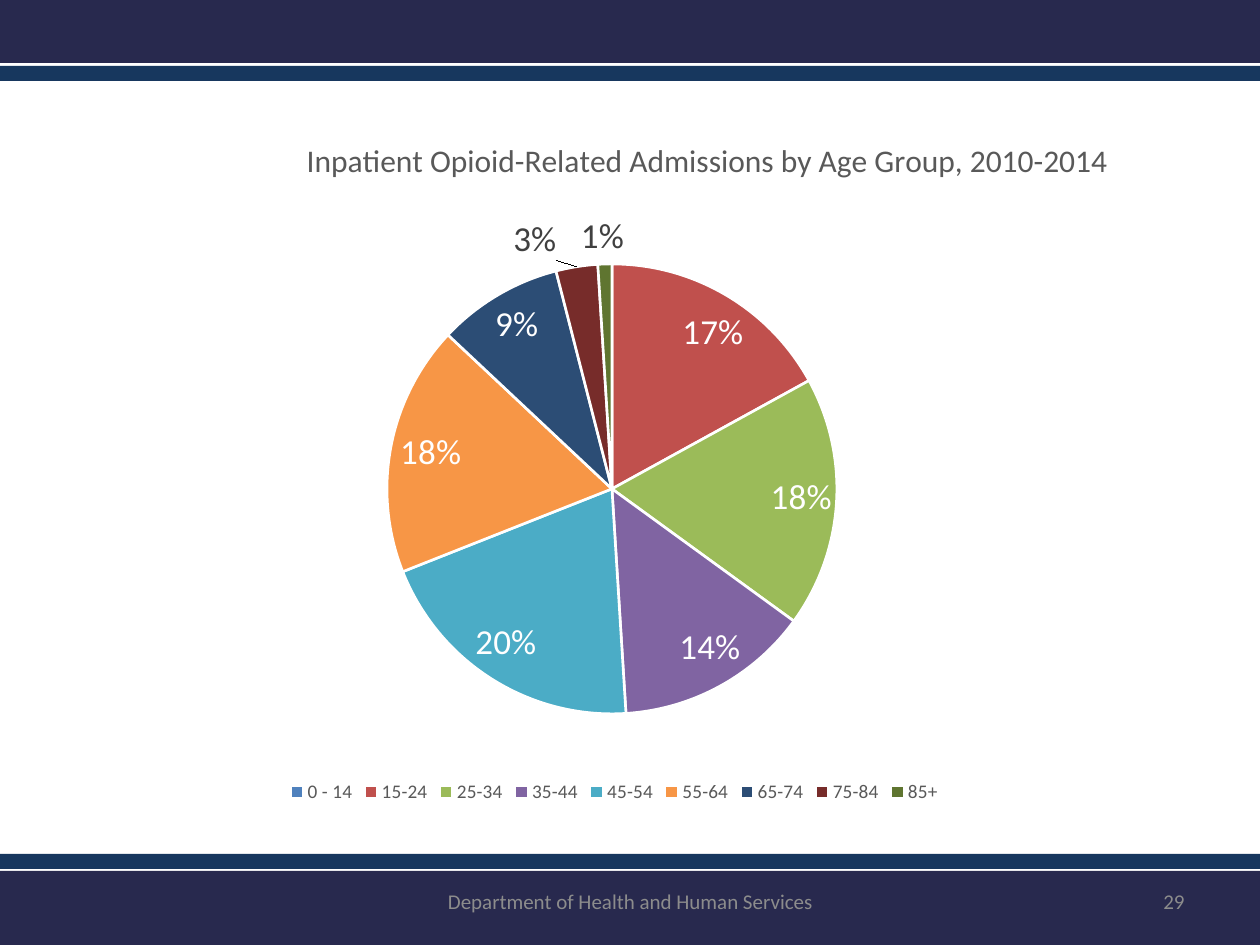
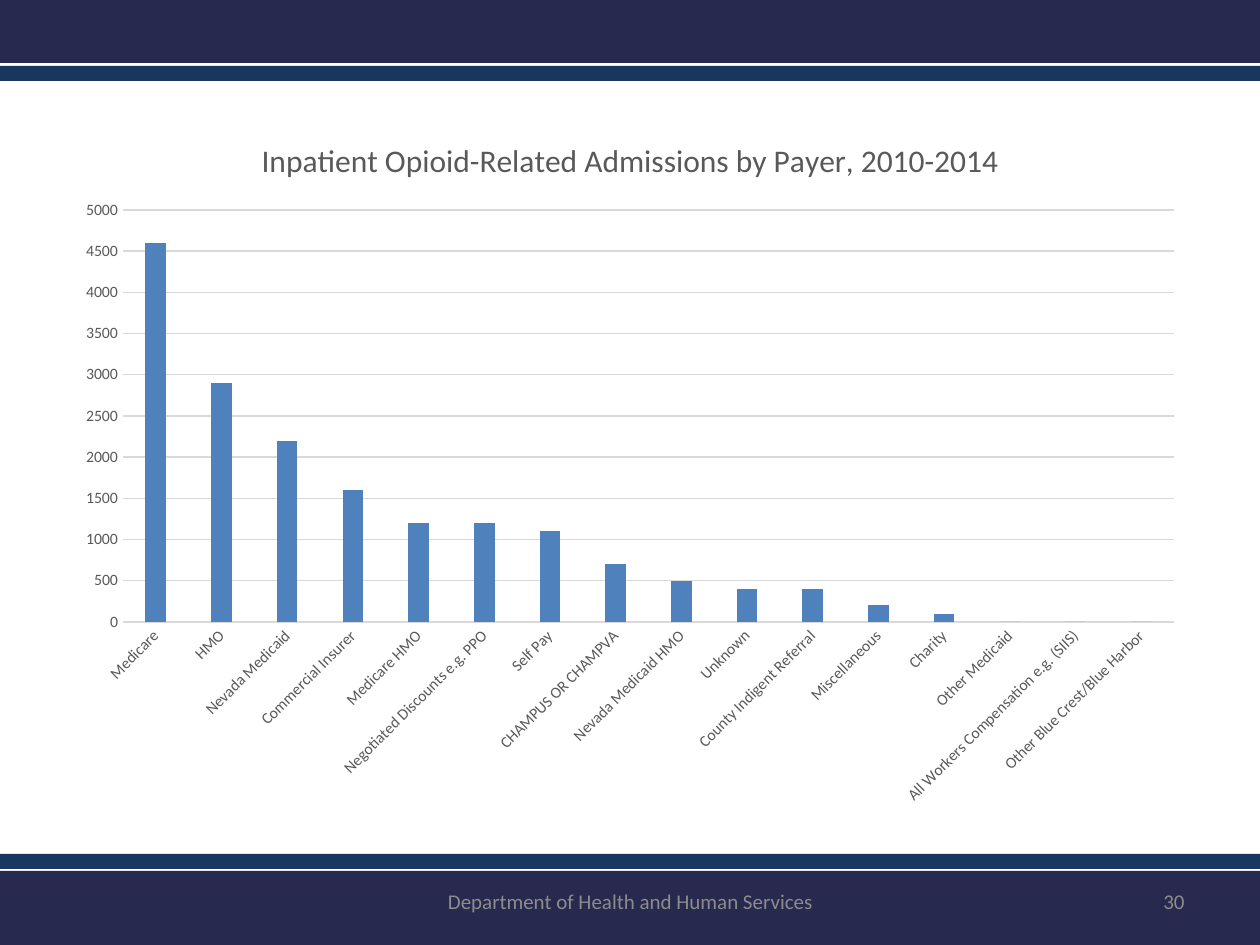
from lxml import etree
from pptx import Presentation
from pptx import util as u
from pptx.chart import data as chart_data
from pptx.dml import color
from pptx.enum import chart as ch, shapes, text
from pptx.oxml import ns

NAVY = color.RGBColor(0x28, 0x29, 0x4E)
STRIPE = color.RGBColor(0x17, 0x37, 0x5E)
FOOTER_GRAY = color.RGBColor(0x8C, 0x8C, 0x8C)
CHART_GRAY = color.RGBColor(0x59, 0x59, 0x59)
LABEL_GRAY = color.RGBColor(0x40, 0x40, 0x40)
GRID = color.RGBColor(0xD9, 0xD9, 0xD9)
WHITE = color.RGBColor(0xFF, 0xFF, 0xFF)
BLUE = color.RGBColor(0x4F, 0x81, 0xBD)
FONT = "Calibri"
PX = 914400 / 126

BANDS = [
    ((0, 0, 1260, 63), NAVY),
    ((0, 66, 1261, 15), STRIPE),
    ((0, 871, 1260, 75), NAVY),
    ((0, 854, 1261, 15), STRIPE),
]
FOOTER = "Department of Health and Human Services"
FOOTER_BOX = (431, 876, 399, 50)
NUMBER_BOX = (903, 876, 294, 50)

AGE_TITLE = "Inpatient Opioid-Related Admissions by Age Group, 2010-2014"
AGE_BOX = (32, 126, 1165, 683)
AGE_PLOT = (387, 264, 450, 450)
AGE_TITLE_AT = (301, 133)
AGE_GROUPS = [
    ("0 - 14", 0, BLUE, (42, 1)),
    ("15-24", 17, color.RGBColor(0xC0, 0x50, 0x4D), (21, 9)),
    ("25-34", 18, color.RGBColor(0x9B, 0xBB, 0x59), (3, -6)),
    ("35-44", 14, color.RGBColor(0x80, 0x64, 0xA2), (24, -11)),
    ("45-54", 20, color.RGBColor(0x4B, 0xAC, 0xC6), (-20, -9)),
    ("55-64", 18, color.RGBColor(0xF7, 0x96, 0x46), (2, -18)),
    ("65-74", 9, color.RGBColor(0x2C, 0x4D, 0x75), (-6, 1)),
    ("75-84", 3, color.RGBColor(0x77, 0x2C, 0x2A), (-19, 1)),
    ("85+", 1, color.RGBColor(0x5F, 0x75, 0x30), (-2, 1)),
]
SMALLEST_INSIDE = 9

PAYER_TITLE = "Inpatient Opioid-Related Admissions by Payer, 2010-2014"
PAYER_BOX = (63, 116, 1134, 703)
PAYER_PLOT = (123, 210, 1051, 412)
PAYER_TITLE_AT = (256, 133)
PAYERS = [
    ("Medicare", 4600),
    ("HMO", 2900),
    ("Nevada Medicaid", 2200),
    ("Commercial Insurer", 1600),
    ("Medicare HMO", 1200),
    ("Negotiated Discounts e.g. PPO", 1200),
    ("Self Pay", 1100),
    ("CHAMPUS OR CHAMPVA", 700),
    ("Nevada Medicaid HMO", 500),
    ("Unknown", 400),
    ("County Indigent Referral", 400),
    ("Miscellaneous", 200),
    ("Charity", 100),
    ("Other Medicaid", 0),
    ("All Workers Compensation e.g. (SIIS)", 0),
    ("Other Blue Crest/Blue Harbor", 0),
]


def scaled(box):
    return [round(length * PX) for length in box]


def style_font(font, size, rgb):
    font.name = FONT
    font.size = u.Pt(size)
    font.bold = False
    font.color.rgb = rgb


def add_text(page, box, words, size=12, rgb=FOOTER_GRAY, align=text.PP_ALIGN.CENTER):
    frame = page.shapes.add_textbox(*scaled(box)).text_frame
    frame.word_wrap = True
    frame.vertical_anchor = text.MSO_ANCHOR.MIDDLE
    para = frame.paragraphs[0]
    para.alignment = align
    span = para.add_run()
    span.text = words
    style_font(span.font, size, rgb)


def add_bands(layout, page):
    for box, rgb in BANDS:
        band = page.shapes.add_shape(shapes.MSO_SHAPE.RECTANGLE, *scaled(box))
        band.shadow.inherit = False
        band.fill.solid()
        band.fill.fore_color.rgb = rgb
        band.line.fill.background()
        layout.shapes._spTree.append(band._element)


def add_page(deck, number):
    page = deck.slides.add_slide(deck.slide_layouts[6])
    add_text(page, FOOTER_BOX, FOOTER)
    add_text(page, NUMBER_BOX, str(number), align=text.PP_ALIGN.RIGHT)
    return page


def chart_layout(**values):
    layout = etree.Element(ns.qn("c:layout"))
    manual = etree.SubElement(layout, ns.qn("c:manualLayout"))
    for name, value in values.items():
        etree.SubElement(manual, ns.qn(f"c:{name}"), val=str(value))
    return layout


def edge_layout(box, left, top, **extra):
    x, y = (left - box[0]) / box[2], (top - box[1]) / box[3]
    return chart_layout(**extra, xMode="edge", yMode="edge", x=x, y=y)


def drop_layout(element):
    for old in element.findall(ns.qn("c:layout")):
        element.remove(old)


def place_plot(chart, box, plot_box):
    left, top, width, height = plot_box
    area = chart._chartSpace.chart.plotArea
    drop_layout(area)
    layout = edge_layout(box, left, top, layoutTarget="inner")
    etree.SubElement(layout[0], ns.qn("c:w"), val=str(width / box[2]))
    etree.SubElement(layout[0], ns.qn("c:h"), val=str(height / box[3]))
    area.insert(0, layout)


def add_chart(page, kind, rows, title, box, plot_box, title_at):
    values = chart_data.CategoryChartData()
    values.categories = [row[0] for row in rows]
    values.add_series("Series 1", [row[1] for row in rows])
    chart = page.shapes.add_chart(kind, *scaled(box), values).chart
    style_font(chart.font, 10, CHART_GRAY)
    chart.has_title = True
    chart.chart_title.include_in_layout = False
    span = chart.chart_title.text_frame.paragraphs[0].add_run()
    span.text = title
    style_font(span.font, 18, CHART_GRAY)
    element = chart.chart_title._element
    drop_layout(element)
    element.find(ns.qn("c:tx")).addnext(edge_layout(box, *title_at))
    place_plot(chart, box, plot_box)
    return chart


def label_slice(point, inside, shift):
    label = point.data_label
    style_font(label.font, 20, WHITE if inside else LABEL_GRAY)
    positions = ch.XL_LABEL_POSITION
    label.position = positions.INSIDE_END if inside else positions.OUTSIDE_END
    element = label._dLbl
    element.find(ns.qn("c:showVal")).set("val", "0")
    element.find(ns.qn("c:showPercent")).set("val", "1")
    element.insert(1, chart_layout(x=shift[0] / AGE_BOX[2], y=shift[1] / AGE_BOX[3]))


def add_age_pie(page):
    kind = ch.XL_CHART_TYPE.PIE
    chart = add_chart(page, kind, AGE_GROUPS, AGE_TITLE, AGE_BOX, AGE_PLOT, AGE_TITLE_AT)
    chart.has_legend = True
    chart.legend.position = ch.XL_LEGEND_POSITION.BOTTOM
    chart.legend.include_in_layout = False
    style_font(chart.legend.font, 11, CHART_GRAY)

    plot = chart.plots[0]
    plot.vary_by_categories = True
    series = plot.series[0]
    labels = series.data_labels
    labels.show_value = False
    labels.show_percentage = True
    style_font(labels.font, 20, LABEL_GRAY)
    for index, (group, share, rgb, shift) in enumerate(AGE_GROUPS):
        point = series.points[index]
        point.format.fill.solid()
        point.format.fill.fore_color.rgb = rgb
        point.format.line.color.rgb = WHITE
        point.format.line.width = u.Pt(1.5)
        label_slice(point, share >= SMALLEST_INSIDE, shift)
    leader = labels._element.find(ns.qn("c:showLeaderLines"))
    if leader is None:
        leader = etree.SubElement(labels._element, ns.qn("c:showLeaderLines"))
    leader.set("val", "1")


def add_payer_columns(page):
    kind = ch.XL_CHART_TYPE.COLUMN_CLUSTERED
    chart = add_chart(page, kind, PAYERS, PAYER_TITLE, PAYER_BOX, PAYER_PLOT, PAYER_TITLE_AT)
    chart.has_legend = False
    plot = chart.plots[0]
    plot.vary_by_categories = False
    plot.gap_width = 219
    plot.overlap = -27
    fill = plot.series[0].format.fill
    fill.solid()
    fill.fore_color.rgb = BLUE

    for axis in (chart.category_axis, chart.value_axis):
        axis.major_tick_mark = axis.minor_tick_mark = ch.XL_TICK_MARK.NONE
        style_font(axis.tick_labels.font, 9, CHART_GRAY)
    rotation = chart.category_axis._element.find(ns.qn("c:txPr")).find(ns.qn("a:bodyPr"))
    rotation.set("rot", "-2700000")
    rotation.set("vert", "horz")

    value_axis = chart.value_axis
    value_axis.minimum_scale = 0
    value_axis.maximum_scale = 5000
    value_axis.major_unit = 500
    value_axis.tick_labels.number_format = "0"
    value_axis.tick_labels.number_format_is_linked = False
    value_axis.format.line.fill.background()
    value_axis.has_major_gridlines = True
    for line in (chart.category_axis.format.line, value_axis.major_gridlines.format.line):
        line.color.rgb = GRID
        line.width = u.Pt(0.75)


def main():
    deck = Presentation()
    deck.slide_width, deck.slide_height = scaled((1260, 945))
    for number, add_content in enumerate((add_age_pie, add_payer_columns), 29):
        page = add_page(deck, number)
        add_content(page)
    add_bands(page.slide_layout, page)
    deck.save("out.pptx")


if __name__ == "__main__":
    main()
